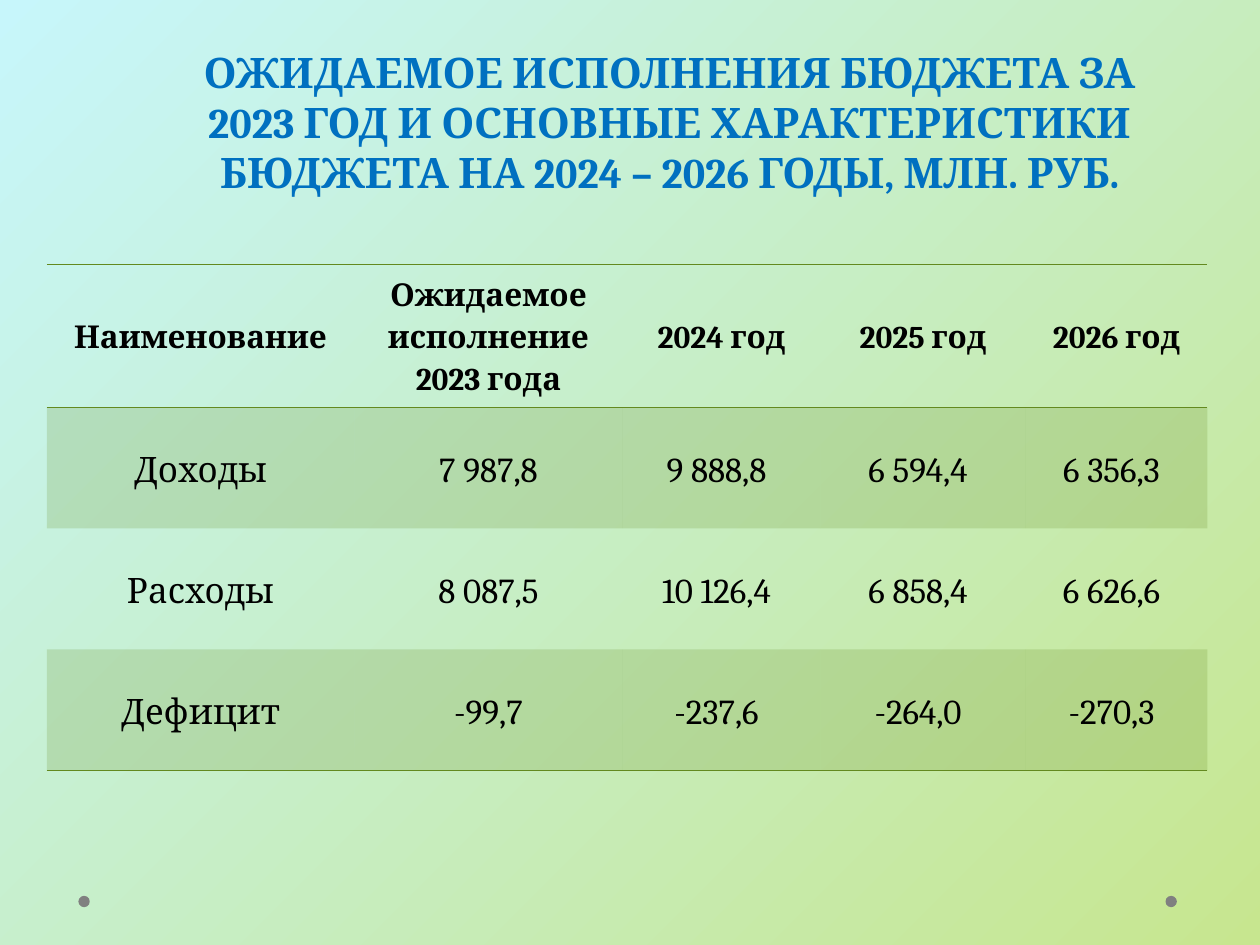
from dataclasses import dataclass
from typing import Any

from lxml import etree
from pptx import Presentation
from pptx import util as u
from pptx.dml.color import RGBColor
from pptx.enum import shapes, text
from pptx.oxml import ns


@dataclass(frozen=True)
class Theme:
    font: str = "Cambria"
    title: str = "0070C0"
    ink: str = "000000"
    accent: str = "63891F"
    dot: str = "808080"
    background: tuple[str, str] = ("C7F6FB", "C7E68F")
    band_opacity: int = 20
    title_size: int = 24
    header_size: int = 18
    body_size: int = 20


@dataclass(frozen=True)
class Box:
    left: float
    top: float
    width: float
    height: float

    def lengths(self) -> list[u.Length]:
        return [u.Pt(v) for v in (self.left, self.top, self.width, self.height)]


@dataclass(frozen=True)
class CellStyle:
    size: int
    bold: bool = False
    banded: bool = False
    borders: tuple[str, ...] = ()
    tight: bool = False


THEME = Theme()
TITLE = (
    "ОЖИДАЕМОЕ ИСПОЛНЕНИЯ БЮДЖЕТА ЗА 2023 ГОД И ОСНОВНЫЕ "
    "ХАРАКТЕРИСТИКИ БЮДЖЕТА НА 2024 – 2026 ГОДЫ, МЛН. РУБ."
)
BUDGET = [
    ["Наименование", "Ожидаемое исполнение 2023 года", "2024 год", "2025 год", "2026 год"],
    ["Доходы", "7 987,8", "9 888,8", "6 594,4", "6 356,3"],
    ["Расходы", "8 087,5", "10 126,4", "6 858,4", "6 626,6"],
    ["Дефицит", "-99,7", "-237,6", "-264,0", "-270,3"],
]
COLUMN_WIDTHS = [175.7, 153.4, 113, 117.4, 103.7]
ROW_HEIGHTS = [81.5] + [69.2] * 3
TITLE_BOX = Box(82, 22.3, 601.2, 94.3)
TABLE_BOX = Box(26.8, 151, sum(COLUMN_WIDTHS), sum(ROW_HEIGHTS))
DOTS = [Box(left, 511.9, 6.5, 6.5) for left in (44.8, 666)]
NO_TABLE_STYLE = "{2D5ABB26-0587-4C30-8999-92F81FD0307C}"


def apply(target: Any, values: dict[str, Any]) -> None:
    for name, value in values.items():
        setattr(target, name, value)


def format_paragraph(paragraph: Any, size: int, bold: bool, color: str, spacing: float) -> None:
    apply(paragraph, {"alignment": text.PP_ALIGN.CENTER, "line_spacing": spacing})
    apply(paragraph.font, {"name": THEME.font, "size": u.Pt(size), "bold": bold})
    paragraph.font.color.rgb = RGBColor.from_string(color)


def paint_background(slide: Any) -> None:
    fill = slide.background.fill
    fill.gradient()
    fill.gradient_angle = 315
    for stop, color in zip(fill.gradient_stops, THEME.background):
        stop.color.rgb = RGBColor.from_string(color)
        stop.position = THEME.background.index(color)


def draw_title(slide: Any) -> None:
    shape = slide.shapes.title
    apply(shape, dict(zip(("left", "top", "width", "height"), TITLE_BOX.lengths())))
    frame = shape.text_frame
    frame.text = TITLE
    apply(frame, {
        "word_wrap": True,
        "auto_size": text.MSO_AUTO_SIZE.SHAPE_TO_FIT_TEXT,
        "vertical_anchor": text.MSO_ANCHOR.MIDDLE,
    })
    format_paragraph(frame.paragraphs[0], THEME.title_size, True, THEME.title, 1.0)


def draw_dot(slide: Any, box: Box) -> None:
    shape = slide.shapes.add_shape(shapes.MSO_SHAPE.OVAL, *box.lengths())
    shape.shadow.inherit = False
    shape.fill.solid()
    shape.fill.fore_color.rgb = RGBColor.from_string(THEME.dot)
    shape.line.fill.background()


def fill_band(cell: Any) -> None:
    cell.fill.solid()
    cell.fill.fore_color.rgb = RGBColor.from_string(THEME.accent)
    color = cell._tc.tcPr.find(".//" + ns.qn("a:srgbClr"))
    etree.SubElement(color, ns.qn("a:alpha"), val=str(THEME.band_opacity * 1000))


def add_borders(cell: Any, sides: tuple[str, ...]) -> None:
    # Border lines come before the fill in the cell properties
    for position, side in enumerate(sides):
        line = etree.Element(ns.qn(f"a:ln{side}"), w=str(u.Pt(1)))
        solid = etree.SubElement(line, ns.qn("a:solidFill"))
        etree.SubElement(solid, ns.qn("a:srgbClr"), val=THEME.accent)
        cell._tc.tcPr.insert(position, line)


def draw_cell(cell: Any, content: str, style: CellStyle) -> None:
    cell.text = content
    cell.vertical_anchor = text.MSO_ANCHOR.MIDDLE
    if style.tight:
        apply(cell, {
            "margin_left": u.Pt(0.7), "margin_top": u.Pt(0.7),
            "margin_right": u.Pt(6.5), "margin_bottom": u.Pt(0),
        })
    if style.banded:
        fill_band(cell)
    else:
        cell.fill.background()
    add_borders(cell, style.borders)
    format_paragraph(cell.text_frame.paragraphs[0], style.size, style.bold, THEME.ink, 1.15)


def cell_style(row: int, column: int) -> CellStyle:
    if row == 0:
        return CellStyle(THEME.header_size, bold=True, borders=("T", "B"))
    return CellStyle(
        THEME.body_size,
        banded=row % 2 == 1,
        borders=("B",) if row == len(BUDGET) - 1 else (),
        tight=column >= 2,
    )


def draw_table(slide: Any) -> None:
    frame = slide.shapes.add_table(len(BUDGET), len(COLUMN_WIDTHS), *TABLE_BOX.lengths())
    table = frame.table
    apply(table, {"first_row": True, "horz_banding": False})
    table._tbl.tblPr.find(ns.qn("a:tableStyleId")).text = NO_TABLE_STYLE
    for column, width in zip(table.columns, COLUMN_WIDTHS):
        column.width = u.Pt(width)
    for row, height in zip(table.rows, ROW_HEIGHTS):
        row.height = u.Pt(height)
    for row, values in enumerate(BUDGET):
        for column, content in enumerate(values):
            draw_cell(table.cell(row, column), content, cell_style(row, column))


def main() -> None:
    presentation = Presentation()
    apply(presentation, {"slide_width": u.Pt(720), "slide_height": u.Pt(540)})
    slide = presentation.slides.add_slide(presentation.slide_layouts[5])
    paint_background(slide)
    # Footer dots
    for box in DOTS:
        draw_dot(slide, box)
    # Heading and budget figures
    draw_title(slide)
    draw_table(slide)
    presentation.save("out.pptx")


if __name__ == "__main__":
    main()
